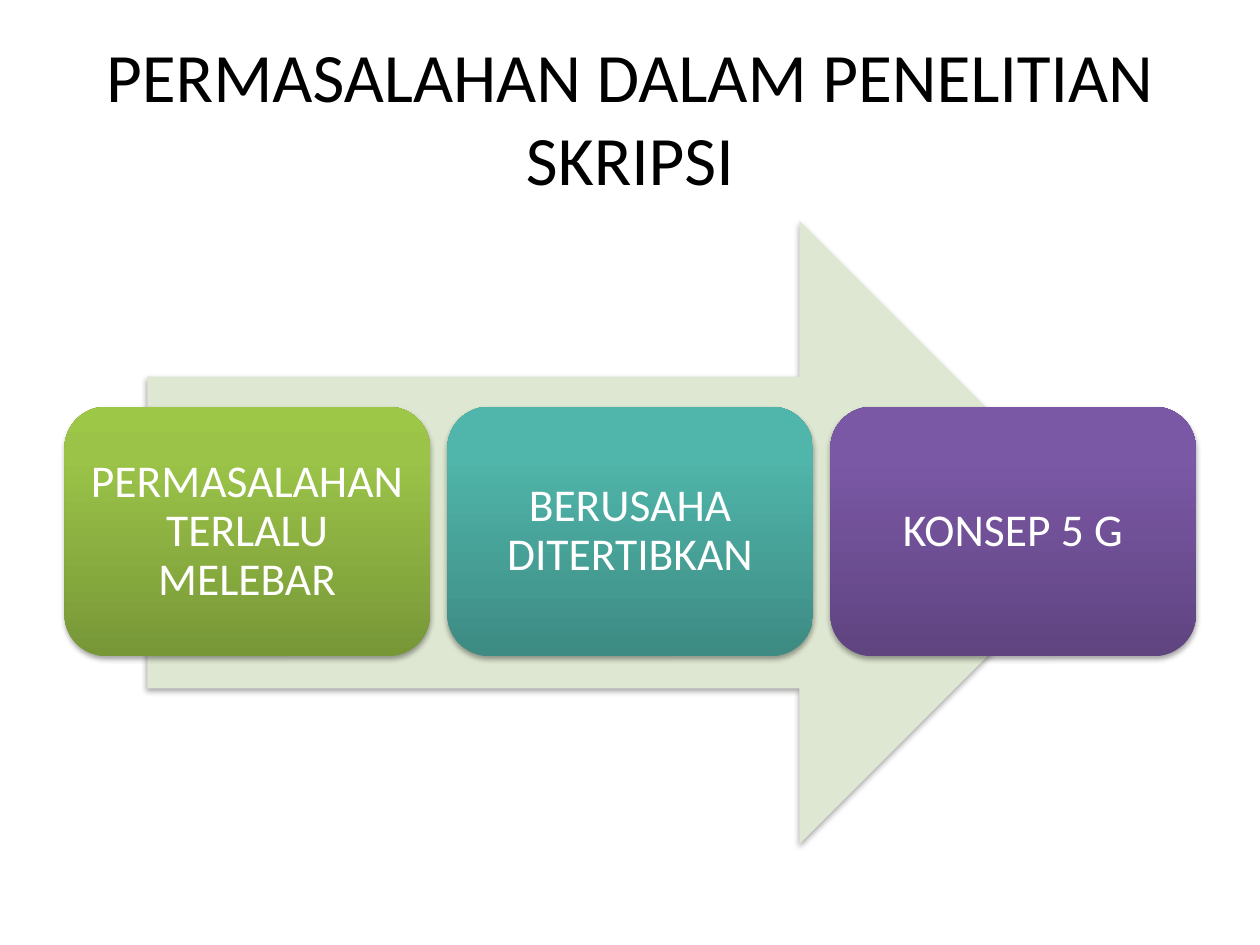
from copy import deepcopy
from dataclasses import dataclass

from lxml.etree import SubElement
from pptx import Presentation
from pptx.dml.color import RGBColor
from pptx.enum.shapes import MSO_SHAPE as Shp
from pptx.enum.text import MSO_ANCHOR as Anchor, MSO_AUTO_SIZE as Fit, PP_ALIGN as Align
from pptx.oxml.ns import qn
from pptx.shapes.autoshape import Shape
from pptx.slide import Slide
from pptx.util import Cm, Pt

CARD_W, CARD_H = 7.37, 5.03
CARD_LEFT, CARD_TOP, CARD_STEP = 1.3, 8.2, 7.72


@dataclass
class Card:
    text: str
    bottom: str
    middle: str
    top: str


CARDS = [
    Card("PERMASALAHAN TERLALU MELEBAR", "779737", "9BC348", "9DC746"),
    Card("BERUSAHA DITERTIBKAN", "3D8B83", "50B5AA", "4EB8AC"),
    Card("KONSEP 5 G", "5F4480", "7B58A6", "7C57A8"),
]


def rgb(code: str) -> RGBColor:
    return RGBColor.from_string(code)


def write(sp: Shape, text: str, *, size: float, color: str,
          spacing: float = 1.0, inset: float = 0.25) -> None:
    tf = sp.text_frame
    tf.word_wrap = True
    tf.auto_size = Fit.NONE
    tf.vertical_anchor = Anchor.MIDDLE
    tf.margin_left = tf.margin_right = tf.margin_top = tf.margin_bottom = Cm(inset)
    p = tf.paragraphs[0]
    p.alignment = Align.CENTER
    p.line_spacing = spacing
    r = p.add_run()
    r.text = text
    r.font.name = "Calibri"
    r.font.size = Pt(size)
    r.font.color.rgb = rgb(color)


def add_shape(s: Slide, kind: Shp, left: float, top: float,
              width: float, height: float) -> Shape:
    sp = s.shapes.add_shape(kind, Cm(left), Cm(top), Cm(width), Cm(height))
    sp.line.fill.background()
    sp.shadow.inherit = False
    effects = sp._element.spPr.find(qn("a:effectLst"))
    shadow = SubElement(effects, qn("a:outerShdw"), blurRad=str(Pt(3.1)),
                        dist=str(Pt(1.8)), dir="5400000", rotWithShape="0")
    color = SubElement(shadow, qn("a:srgbClr"), val="000000")
    SubElement(color, qn("a:alpha"), val="35000")
    return sp


def add_card(s: Slide, card: Card, left: float) -> None:
    sp = add_shape(s, Shp.ROUNDED_RECTANGLE, left, CARD_TOP, CARD_W, CARD_H)
    fill = sp.fill
    fill.gradient()
    fill.gradient_angle = 90
    stops = sp._element.spPr.find(qn("a:gradFill")).find(qn("a:gsLst"))
    stops.append(deepcopy(stops[0]))
    colors = (card.bottom, card.middle, card.top)
    for stop, position, color in zip(fill.gradient_stops, (0, 0.8, 1), colors):
        stop.position = position
        stop.color.rgb = rgb(color)
    write(sp, card.text, size=26, color="FFFFFF", spacing=0.9)


def main() -> None:
    """Build the slide with its title, arrow and three cards."""
    prs = Presentation()
    prs.slide_width, prs.slide_height = Cm(25.4), Cm(19.05)
    s = prs.slides.add_slide(prs.slide_layouts[5])
    title = s.shapes.title
    title.left, title.top, title.width, title.height = Cm(1.27), Cm(0.76), Cm(22.86), Cm(3.18)
    write(title, "PERMASALAHAN DALAM PENELITIAN SKRIPSI", size=39.6, color="000000")
    arrow = add_shape(s, Shp.RIGHT_ARROW, 2.97, 4.45, 19.43, 12.57)
    arrow.fill.solid()
    arrow.fill.fore_color.rgb = rgb("DEE7D1")
    for i, card in enumerate(CARDS):
        add_card(s, card, CARD_LEFT + i * CARD_STEP)
    prs.save("out.pptx")


if __name__ == "__main__":
    main()
